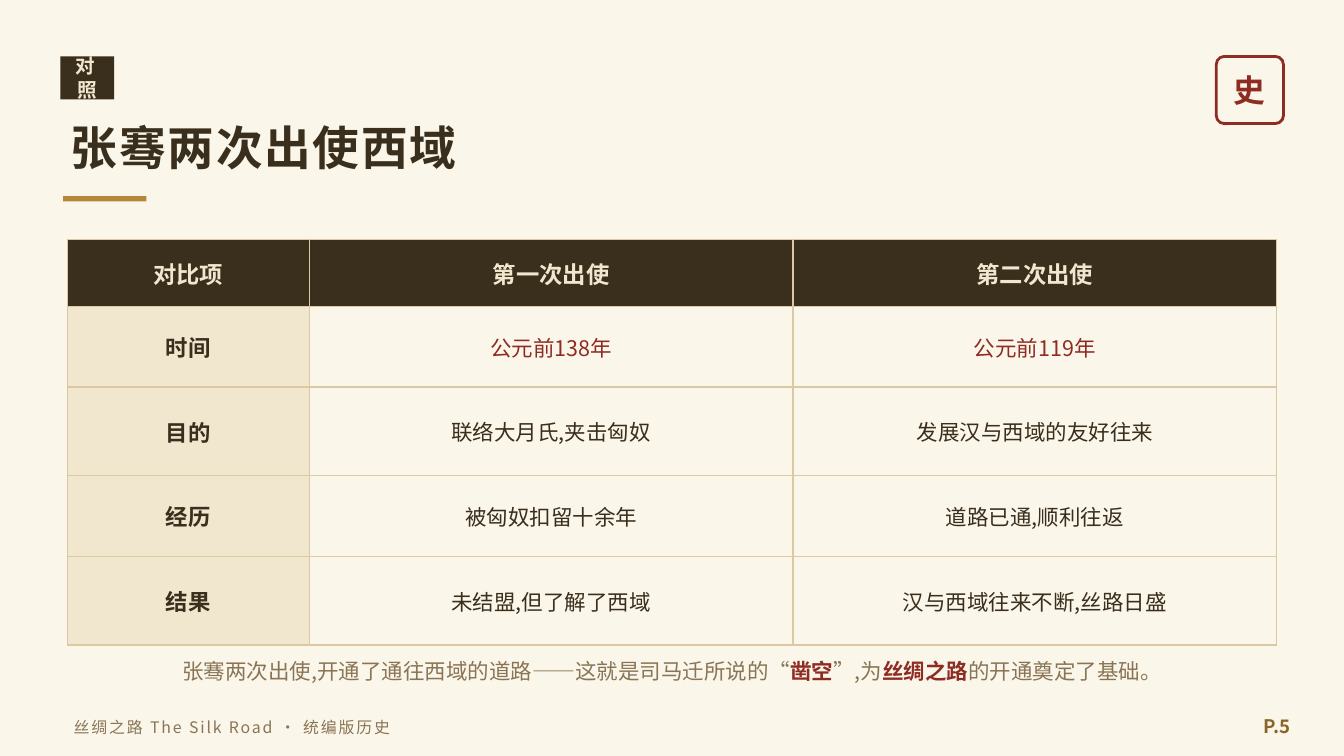
import pptx
import pptx.util
import pptx.dml.color
import pptx.enum.shapes
import pptx.enum.text
import pptx.oxml
import pptx.oxml.ns

Inches, Pt = pptx.util.Inches, pptx.util.Pt
SHAPE = pptx.enum.shapes.MSO_SHAPE
ALIGN = pptx.enum.text.PP_ALIGN
MIDDLE = pptx.enum.text.MSO_ANCHOR.MIDDLE
FONT = "Noto Sans CJK SC"
COLORS = {
    "paper": "FBF6EA", "ink": "3A2E1C", "cream": "F1E6CE", "sand": "F1E7CF",
    "rule": "DCC9A3", "gold": "B8863B", "red": "8E2B22",
    "muted": "897556", "page": "8A6526",
}


def rgb(name):
    return pptx.dml.color.RGBColor.from_string(COLORS[name])


def add_run(para, text, size, color, bold=False, gap=0):
    run = para.add_run()
    run.text = text
    font = run.font
    font.size, font.bold, font.name = Pt(size), bold, FONT
    font.color.rgb = rgb(color)
    props = run._r.get_or_add_rPr()
    east = pptx.oxml.parse_xml(
        f'<a:ea {pptx.oxml.ns.nsdecls("a")} typeface="{FONT}"/>')
    props.find(pptx.oxml.ns.qn("a:latin")).addnext(east)
    if gap:
        props.set("spc", str(gap * 100))


def add_text(slide, box, runs, align=ALIGN.LEFT):
    frame = slide.shapes.add_textbox(*map(Inches, box)).text_frame
    frame.word_wrap = True
    frame.vertical_anchor = MIDDLE
    para = frame.paragraphs[0]
    para.alignment = align
    for run in runs:
        add_run(para, *run)


def add_box(slide, box, fill=None, line=None, kind=SHAPE.RECTANGLE):
    shape = slide.shapes.add_shape(kind, *map(Inches, box))
    shape.shadow.inherit = False
    if fill:
        shape.fill.solid()
        shape.fill.fore_color.rgb = rgb(fill)
    else:
        shape.fill.background()
    if line:
        shape.line.color.rgb = rgb(line)
        shape.line.width = Pt(1.5)
    else:
        shape.line.fill.background()
    return shape


def add_head(slide, left, top):
    # Tag, title and gold underline
    add_box(slide, (left, top, 0.4, 0.32), fill="ink")
    add_text(slide, (left, top - 0.01, 0.4, 0.34),
             [("对照", 10.5, "cream", True, 2)], ALIGN.CENTER)
    add_text(slide, (left - 0.02, top + 0.36, 9, 0.62),
             [("张骞两次出使西域", 25, "ink", True, 1)])
    add_box(slide, (left + 0.02, top + 1.04, 0.62, 0.04), fill="gold")


def add_seal(slide, left, top, side):
    seal = add_box(slide, (left, top, side, side), line="red",
                   kind=SHAPE.ROUNDED_RECTANGLE)
    seal.adjustments[0] = 0.12
    add_text(slide, (left, top - 0.01, side, side + 0.02),
             [("史", 17, "red", True)], ALIGN.CENTER)


def add_edges(cell):
    props = cell._tc.get_or_add_tcPr()
    for i, side in enumerate("LRTB"):
        props.insert(i, pptx.oxml.parse_xml(
            f'<a:ln{side} {pptx.oxml.ns.nsdecls("a")} w="{Pt(0.75)}"><a:solidFill>'
            f'<a:srgbClr val="{COLORS["rule"]}"/></a:solidFill></a:ln{side}>'))


def cell_style(row, col):
    """Fill, text size, text colour and weight for a cell."""
    if row == 0:
        return "ink", 12.5, "cream", True
    if col == 0:
        return "sand", 12, "ink", True
    return "paper", 11.5, "red" if row == 1 else "ink", False


def add_grid(slide, left, top, rows, widths, heights):
    table = slide.shapes.add_table(
        len(rows), len(widths), Inches(left), Inches(top),
        Inches(sum(widths)), Inches(sum(heights))).table
    for col, width in zip(table.columns, widths):
        col.width = Inches(width)
    for row, height in zip(table.rows, heights):
        row.height = Inches(height)
    for r, texts in enumerate(rows):
        for c, text in enumerate(texts):
            fill, size, color, bold = cell_style(r, c)
            cell = table.cell(r, c)
            cell.fill.solid()
            cell.fill.fore_color.rgb = rgb(fill)
            cell.vertical_anchor = MIDDLE
            add_edges(cell)
            para = cell.text_frame.paragraphs[0]
            para.alignment = ALIGN.CENTER
            add_run(para, text, size, color, bold)


def add_note(slide, box):
    parts = [
        ("张骞两次出使,开通了通往西域的道路——这就是司马迁所说的“", False),
        ("凿空", True), ("”,为", False),
        ("丝绸之路", True), ("的开通奠定了基础。", False),
    ]
    add_text(slide, box, [(text, 11.5, "red" if key else "muted", key)
                          for text, key in parts], ALIGN.CENTER)


def add_foot(slide, left, top):
    add_text(slide, (left, top + 0.02, 6.8, 0.3),
             [("丝绸之路 The Silk Road · 统编版历史", 8.5, "muted", False, 1)])
    add_text(slide, (left + 8.65, top, 0.6, 0.32),
             [("P.5", 10, "page", True)], ALIGN.RIGHT)


def main():
    deck = pptx.Presentation()
    # 16:9 page
    deck.slide_width, deck.slide_height = Inches(10), Inches(10 * 9 / 16)
    slide = deck.slides.add_slide(deck.slide_layouts[6])
    slide.background.fill.solid()
    slide.background.fill.fore_color.rgb = rgb("paper")

    rows = [
        ("对比项", "第一次出使", "第二次出使"),
        ("时间", "公元前138年", "公元前119年"),
        ("目的", "联络大月氏,夹击匈奴", "发展汉与西域的友好往来"),
        ("经历", "被匈奴扣留十余年", "道路已通,顺利往返"),
        ("结果", "未结盟,但了解了西域", "汉与西域往来不断,丝路日盛"),
    ]
    add_head(slide, 0.45, 0.42)
    add_seal(slide, 9.05, 0.42, 0.5)
    add_grid(slide, 0.5, 1.78, rows, (1.8, 3.6, 3.6),
             (0.5, 0.6, 0.66, 0.6, 0.66))
    add_note(slide, (0.5, 4.74, 9, 0.5))
    add_foot(slide, 0.45, 5.24)
    deck.save("out.pptx")


if __name__ == "__main__":
    main()
